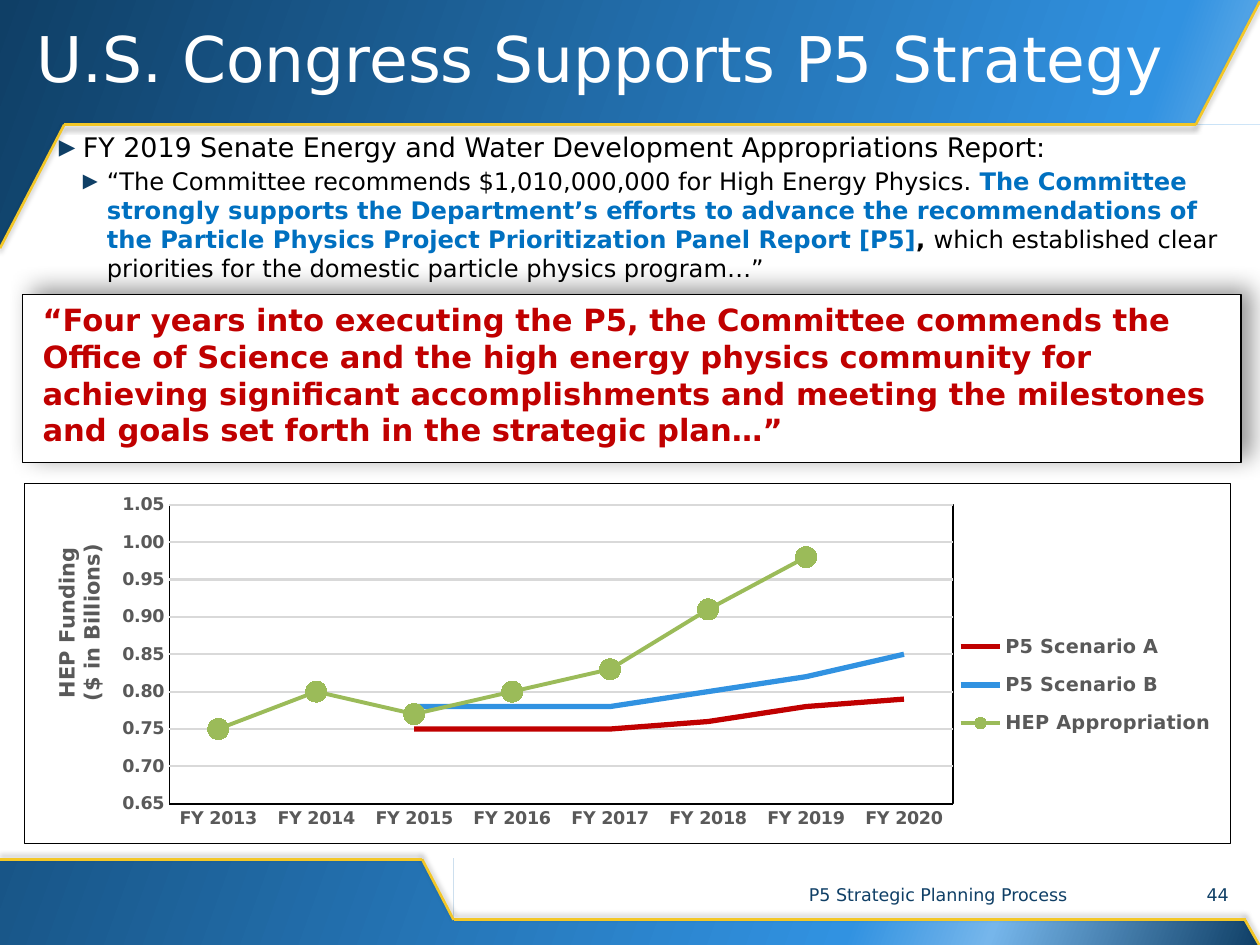
import lxml.etree
import pptx
import pptx.chart.data
import pptx.dml.color
import pptx.enum.chart
import pptx.enum.shapes
import pptx.enum.text
import pptx.oxml.ns
import pptx.util

Inches = pptx.util.Inches
Pt = pptx.util.Pt
RGBColor = pptx.dml.color.RGBColor
SHAPE = pptx.enum.shapes.MSO_SHAPE
ALIGN = pptx.enum.text.PP_ALIGN
ANCHOR = pptx.enum.text.MSO_ANCHOR
qn = pptx.oxml.ns.qn
SubElement = lxml.etree.SubElement

NAVY = RGBColor(0x0F, 0x3F, 0x66)
BLUE = RGBColor(0x31, 0x92, 0xE1)
PALE_BLUE = RGBColor(0x76, 0xB6, 0xEB)
TEXT_BLUE = RGBColor(0x00, 0x70, 0xC0)
GOLD = RGBColor(0xF3, 0xC7, 0x27)
RED = RGBColor(0xC0, 0x00, 0x00)
GREEN = RGBColor(0x9B, 0xBB, 0x59)
GRAY = RGBColor(0x59, 0x59, 0x59)
GRID = RGBColor(0xD9, 0xD9, 0xD9)
WHITE = RGBColor(0xFF, 0xFF, 0xFF)
BLACK = RGBColor(0x00, 0x00, 0x00)


def style(font, size, color, bold=False):
    values = {"name": "DejaVu Sans", "size": Pt(size), "bold": bold}
    for attribute, value in values.items():
        setattr(font, attribute, value)
    font.color.rgb = color


def set_layout(parent, index, target=None, **fractions):
    for old in parent.findall(qn("c:layout")):
        parent.remove(old)
    layout = lxml.etree.Element(qn("c:layout"))
    parent.insert(index, layout)
    manual = SubElement(layout, qn("c:manualLayout"))
    if target:
        SubElement(manual, qn("c:layoutTarget")).set("val", target)
    for axis in ("x", "y"):
        SubElement(manual, qn(f"c:{axis}Mode")).set("val", "edge")
    for key, fraction in fractions.items():
        SubElement(manual, qn(f"c:{key}")).set("val", str(fraction))


prs = pptx.Presentation()
prs.slide_width, prs.slide_height = Inches(10), Inches(7.5)
slide = prs.slides.add_slide(prs.slide_layouts[5])
shapes = slide.shapes

backdrop = slide.background.fill
backdrop.gradient()
stops = slide.element.find(".//" + qn("a:gsLst"))
for stop in list(stops):
    stops.remove(stop)
for percent, color in ((0, NAVY), (74, BLUE), (83, PALE_BLUE), (100, NAVY)):
    stop = SubElement(stops, qn("a:gs"), pos=str(percent * 1000))
    SubElement(stop, qn("a:srgbClr"), val=str(color))
slide.element.find(".//" + qn("a:lin")).set("ang", str(20 * 60000))

for kind, box, rotation, flip in (
    (SHAPE.RECTANGLE, (0, 1.95, 10, 4.86), 0, None),
    (SHAPE.RECTANGLE, (0.51, 0.99, 9.49, 5.68), 0, None),
    (SHAPE.RIGHT_TRIANGLE, (9.49, 6.53, 0.51, 0.98), 180, None),
    (SHAPE.RIGHT_TRIANGLE, (3.09, 6.32, 0.51, 0.98), 180, None),
    (SHAPE.RECTANGLE, (3.6, 6.67, 6.4, 0.63), 0, None),
    (SHAPE.RIGHT_TRIANGLE, (9.49, 0.01, 0.51, 0.98), 0, "flipH"),
    (SHAPE.RIGHT_TRIANGLE, (0, 0.99, 0.51, 0.98), 0, "flipH"),
):
    panel = shapes.add_shape(kind, *map(Inches, box))
    panel.shadow.inherit = False
    panel.fill.solid()
    panel.fill.fore_color.rgb = WHITE
    panel.line.fill.background()
    panel.rotation = rotation
    if flip:
        panel.element.spPr.find(qn("a:xfrm")).set(flip, "1")

shadows = []
for direction, ends in (
    (90, (9.49, 0.99, 10, 0.01)),
    (270, (9.88, 7.3, 10, 7.51)),
    (270, (3.6, 7.3, 9.89, 7.3)),
    (270, (3.6, 7.3, 3.35, 6.82)),
    (270, (0, 6.82, 3.35, 6.82)),
    (90, (9.49, 0.99, 0.51, 0.99)),
    (90, (0, 1.97, 0.51, 0.99)),
):
    edge = shapes.add_connector(pptx.enum.shapes.MSO_CONNECTOR.STRAIGHT, *map(Inches, ends))
    edge.line.color.rgb = GOLD
    edge.line.width = Pt(1.5)
    shadows.append((edge, 28, 3, 2, direction))

title = shapes.title
title_box = {"left": 0.19, "top": 0, "width": 9.67, "height": 0.99}
for attribute, value in title_box.items():
    setattr(title, attribute, Inches(value))
title.element.getparent().append(title.element)
title.text_frame.text = "U.S. Congress Supports P5 Strategy"
title.text_frame.word_wrap = True
title.text_frame.vertical_anchor = ANCHOR.MIDDLE
heading = title.text_frame.paragraphs[0]
heading.alignment = ALIGN.LEFT
heading.line_spacing = 0.9
style(heading.runs[0].font, 36, WHITE)

for text, box, alignment in (
    ("44", (9.38, 6.9, 0.47, 0.4), ALIGN.RIGHT),
    ("P5 Strategic Planning Process", (5.51, 6.9, 3.87, 0.4), ALIGN.CENTER),
):
    footer = shapes.add_textbox(*map(Inches, box)).text_frame
    footer.word_wrap = True
    footer.vertical_anchor = ANCHOR.MIDDLE
    footer.text = text
    footer.paragraphs[0].alignment = alignment
    style(footer.paragraphs[0].runs[0].font, 10, NAVY)

funding = pptx.chart.data.CategoryChartData(number_format="0.00")
funding.categories = [f"FY {year}" for year in range(2013, 2021)]
funding.add_series("P5 Scenario A", (None, None, 0.75, 0.75, 0.75, 0.76, 0.78, 0.79))
funding.add_series("P5 Scenario B", (None, None, 0.78, 0.78, 0.78, 0.8, 0.82, 0.85))
funding.add_series("HEP Appropriation", (0.75, 0.8, 0.77, 0.8, 0.83, 0.91, 0.98, None))
chart = shapes.add_chart(
    pptx.enum.chart.XL_CHART_TYPE.LINE_MARKERS,
    *map(Inches, (0.19, 3.83, 9.58, 2.87)), funding,
).chart
style(chart.font, 10, BLACK)
chart.has_title = False
chart.plots[0].vary_by_categories = False
MARKER = pptx.enum.chart.XL_MARKER_STYLE
for series, color, width, marker in zip(
    chart.plots[0].series, (RED, BLUE, GREEN), (3, 3, 2.25),
    (MARKER.NONE, MARKER.NONE, MARKER.CIRCLE),
):
    series.smooth = False
    series.format.line.color.rgb = color
    series.format.line.width = Pt(width)
    series.marker.style = marker
    if marker == MARKER.CIRCLE:
        series.marker.size = 12
        series.marker.format.fill.solid()
        series.marker.format.fill.fore_color.rgb = color
        series.marker.format.line.color.rgb = color

years, dollars = chart.category_axis, chart.value_axis
for axis in (years, dollars):
    axis.major_tick_mark = axis.minor_tick_mark = pptx.enum.chart.XL_TICK_MARK.NONE
    style(axis.tick_labels.font, 10, GRAY, True)
years.format.line.color.rgb = BLACK
years.format.line.width = Pt(1)
dollars.format.line.fill.background()
scale = {"minimum_scale": 0.65, "maximum_scale": 1.05, "major_unit": 0.05}
for attribute, value in scale.items():
    setattr(dollars, attribute, value)
dollars.tick_labels.number_format = "0.00"
dollars.tick_labels.number_format_is_linked = False
dollars.major_gridlines.format.line.color.rgb = GRID
dollars.major_gridlines.format.line.width = Pt(1.25)
axis_text = dollars.axis_title.text_frame
axis_text.text = "HEP Funding\n($ in Billions)"
for paragraph in axis_text.paragraphs:
    style(paragraph.runs[0].font, 12, GRAY, True)
chart_root = chart.element
axis_title = chart_root.find(".//" + qn("c:valAx")).find(qn("c:title"))
axis_title.find(".//" + qn("a:bodyPr")).set("rot", "-5400000")
axis_title.find(".//" + qn("a:bodyPr")).set("vert", "horz")
set_layout(axis_title, 1, x=0.02, y=0.16)

chart.has_legend = True
chart.legend.position = pptx.enum.chart.XL_LEGEND_POSITION.RIGHT
chart.legend.include_in_layout = False
style(chart.legend.font, 11, GRAY, True)
set_layout(chart_root.find(".//" + qn("c:legend")), 1, x=0.77, y=0.38, w=0.22, h=0.36)
plot_area = chart_root.find(".//" + qn("c:plotArea"))
set_layout(plot_area, 0, "inner", x=0.12, y=0.06, w=0.65, h=0.83)
frame = lxml.etree.Element(qn("c:spPr"))
chart_root.find(qn("c:chart")).addnext(frame)
for area in (frame, SubElement(plot_area, qn("c:spPr"))):
    fill = SubElement(area, qn("a:solidFill"))
    SubElement(fill, qn("a:srgbClr"), val=str(WHITE))
    border = SubElement(area, qn("a:ln"), w=str(Pt(0.75)))
    SubElement(SubElement(border, qn("a:solidFill")), qn("a:srgbClr"), val=str(BLACK))

quote = shapes.add_shape(SHAPE.RECTANGLE, *map(Inches, (0.18, 2.34, 9.67, 1.33)))
quote.shadow.inherit = False
quote.fill.solid()
quote.fill.fore_color.rgb = WHITE
quote.line.color.rgb = BLACK
quote.line.width = Pt(0.75)
shadows.append((quote, 41, 13, 6, 326))
report = shapes.add_textbox(*map(Inches, (0.31, 0.99, 9.55, 1.69)))
for box, paragraphs in (
    (quote, [(0.06, 0, 10, 0, 17.5, [("“Four years into executing the P5, the Committee commends the Office of Science and the high energy physics community for achieving significant accomplishments and meeting the milestones and goals set forth in the strategic plan…”", RED, True)])]),
    (report, [
        (0.25, -0.19, 10, 0, 15.4, [("FY 2019 Senate Energy and Water Development Appropriations Report:", BLACK, False)]),
        (0.44, -0.19, 1.5, 3, 13.8, [
            ("“The Committee recommends $1,010,000,000 for High Energy Physics. ", BLACK, False),
            ("The Committee strongly supports the Department’s efforts to advance the recommendations of the Particle Physics Project Prioritization Panel Report [P5]", TEXT_BLUE, True),
            (", ", BLACK, True),
            ("which established clear priorities for the domestic particle physics program…”", BLACK, False)])]),
):
    box.text_frame.word_wrap = True
    box.text_frame.vertical_anchor = ANCHOR.TOP
    for number, (margin, indent, before, after, size, runs) in enumerate(paragraphs):
        paragraph = box.text_frame.add_paragraph() if number else box.text_frame.paragraphs[0]
        values = {"alignment": ALIGN.LEFT, "level": number, "space_before": Pt(before), "space_after": Pt(after)}
        for attribute, value in values.items():
            setattr(paragraph, attribute, value)
        properties = paragraph.element.get_or_add_pPr() if hasattr(paragraph, "element") else paragraph._p.get_or_add_pPr()
        properties.set("marL", str(Inches(margin)))
        properties.set("indent", str(Inches(indent)))
        if indent:
            SubElement(SubElement(properties, qn("a:buClr")), qn("a:srgbClr"), val=str(NAVY))
            SubElement(properties, qn("a:buSzPct"), val="80000")
            SubElement(properties, qn("a:buFont"), typeface="DejaVu Sans")
            SubElement(properties, qn("a:buChar"), char="▶")
        for text, color, bold in runs:
            run = paragraph.add_run()
            run.text = text
            style(run.font, size, color, bold)

for part, opacity, blur, distance, direction in shadows:
    effects = part.element.spPr.find(qn("a:effectLst"))
    if effects is None:
        effects = SubElement(part.element.spPr, qn("a:effectLst"))
    shadow = SubElement(effects, qn("a:outerShdw"), blurRad=str(Pt(blur)), dist=str(Pt(distance)), dir=str(direction * 60000), algn="ctr", rotWithShape="0")
    tint = SubElement(shadow, qn("a:srgbClr"), val=str(BLACK))
    SubElement(tint, qn("a:alpha"), val=str(opacity * 1000))

prs.save("out.pptx")
